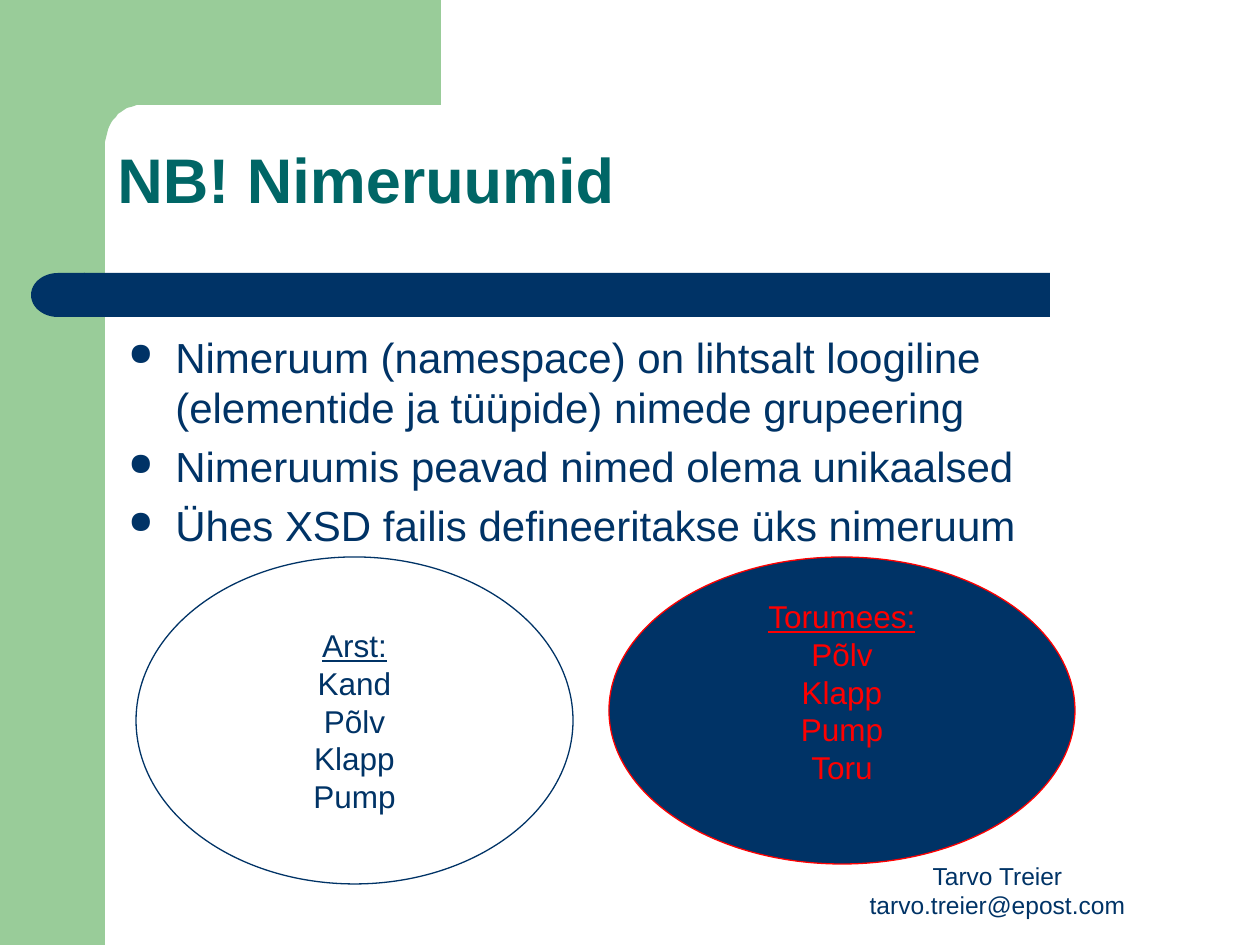
import math
from dataclasses import dataclass

from lxml import etree
from pptx import Presentation
from pptx import util as u
from pptx.dml.color import RGBColor
from pptx.enum import shapes, text
from pptx.oxml.ns import qn

EMU_PER_PX = 914400 / 126
GREEN, NAVY, TEAL, RED = "99CC99", "003366", "006666", "FF0000"
SHAPE = shapes.MSO_SHAPE
ANCHOR = text.MSO_ANCHOR
ALIGN = text.PP_ALIGN


@dataclass(frozen=True)
class Box:
    left: int
    top: int
    width: int
    height: int

    def emu(self) -> list[u.Emu]:
        return [px(n) for n in (self.left, self.top, self.width, self.height)]


@dataclass(frozen=True)
class Namespace:
    box: Box
    owner: str
    names: list[str]
    ink: str
    fill: str | None = None
    bottom_inset: int = 6


def px(length: float) -> u.Emu:
    return u.Emu(round(length * EMU_PER_PX))


def rgb(colour: str) -> RGBColor:
    return RGBColor.from_string(colour)


def paint(shape, fill: str | None, line: str | None = None) -> None:
    shape.shadow.inherit = False
    if fill:
        shape.fill.solid()
        shape.fill.fore_color.rgb = rgb(fill)
    else:
        shape.fill.background()
    if line:
        shape.line.color.rgb = rgb(line)
        shape.line.width = u.Pt(0.75)
    else:
        shape.line.fill.background()


def write(frame, lines: list[str], size: int, colour: str, align=ALIGN.LEFT) -> list:
    """Fill the frame with one paragraph per line and return the paragraphs."""
    frame.text = "\n".join(lines)
    for paragraph in frame.paragraphs:
        paragraph.alignment = align
        font = paragraph.font
        font.name, font.size = "Arial", u.Pt(size)
        font.color.rgb = rgb(colour)
    return list(frame.paragraphs)


def add_text(slide, box: Box, anchor=ANCHOR.TOP):
    frame = slide.shapes.add_textbox(*box.emu()).text_frame
    frame.word_wrap = True
    frame.vertical_anchor = anchor
    return frame


def add_bullet(paragraph, indent: int) -> None:
    properties = paragraph._p.get_or_add_pPr()
    properties.set("marL", str(px(indent)))
    properties.set("indent", str(-px(indent)))
    colour = etree.Element(qn("a:buClr"))
    etree.SubElement(colour, qn("a:srgbClr"), val=NAVY)
    size = etree.Element(qn("a:buSzPct"), val="75000")
    mark = etree.Element(qn("a:buChar"), char="●")
    defaults = properties.find(qn("a:defRPr"))
    for element in (colour, size, mark):
        defaults.addprevious(element)


def add_block(slide, kind, box: Box, fill: str):
    block = slide.shapes.add_shape(kind, *box.emu())
    paint(block, fill)
    return block


def add_corner(slide) -> None:
    """Green top band whose inner corner is rounded."""
    centre_x, centre_y, radius_x, radius_y = 141, 146, 36, 41
    angles = [math.radians(step * 90 / 16) for step in range(17)]
    arc = [(round(centre_x - radius_x * math.sin(a), 2),
            round(centre_y - radius_y * math.cos(a), 2)) for a in angles]
    outline = [(441, 105), *arc, (105, 161), (63, 161), (63, 0)]
    builder = slide.shapes.build_freeform(441, 0, scale=EMU_PER_PX)
    builder.add_line_segments(outline, close=True)
    paint(builder.convert_to_shape(), GREEN)


def add_namespace(slide, space: Namespace) -> None:
    oval = slide.shapes.add_shape(SHAPE.OVAL, *space.box.emu())
    paint(oval, space.fill, space.ink)
    frame = oval.text_frame
    frame.word_wrap = False
    frame.vertical_anchor = ANCHOR.MIDDLE
    frame.margin_bottom = px(space.bottom_inset)
    heading, *_ = write(frame, [space.owner, *space.names], 18, space.ink, ALIGN.CENTER)
    heading.font.underline = True


RULES = [
    "Nimeruum (namespace) on lihtsalt loogiline (elementide ja tüüpide) nimede grupeering",
    "Nimeruumis peavad nimed olema unikaalsed",
    "Ühes XSD failis defineeritakse üks nimeruum",
]
NAMESPACES = [
    Namespace(Box(136, 557, 437, 327), "Arst:", ["Kand", "Põlv", "Klapp", "Pump"], NAVY),
    Namespace(Box(609, 557, 466, 307), "Torumees:", ["Põlv", "Klapp", "Pump", "Toru"],
              RED, NAVY, bottom_inset=44),
]


def main() -> None:
    deck = Presentation()
    deck.slide_width, deck.slide_height = px(1260), px(945)
    slide = deck.slides.add_slide(deck.slide_layouts[6])

    add_block(slide, SHAPE.RECTANGLE, Box(0, 0, 105, 945), GREEN)
    add_corner(slide)
    add_block(slide, SHAPE.RECTANGLE, Box(84, 273, 966, 44), NAVY)
    bar_end = add_block(slide, SHAPE.FLOWCHART_DELAY, Box(31, 273, 54, 44), NAVY)
    bar_end.rotation = 180

    author = add_text(slide, Box(798, 861, 399, 65), ANCHOR.BOTTOM)
    write(author, ["Tarvo Treier", "tarvo.treier@epost.com"], 14, NAVY, ALIGN.CENTER)

    title = add_text(slide, Box(105, 105, 1092, 157), ANCHOR.MIDDLE)
    [heading] = write(title, ["NB! Nimeruumid"], 36, TEAL)
    heading.font.bold = True
    heading.line_spacing = 0.9

    body = add_text(slide, Box(116, 325, 1060, 513))
    for rule in write(body, RULES, 24, NAVY):
        rule.space_before = u.Pt(4.8)
        add_bullet(rule, 47)

    for space in NAMESPACES:
        add_namespace(slide, space)

    deck.save("out.pptx")


if __name__ == "__main__":
    main()
